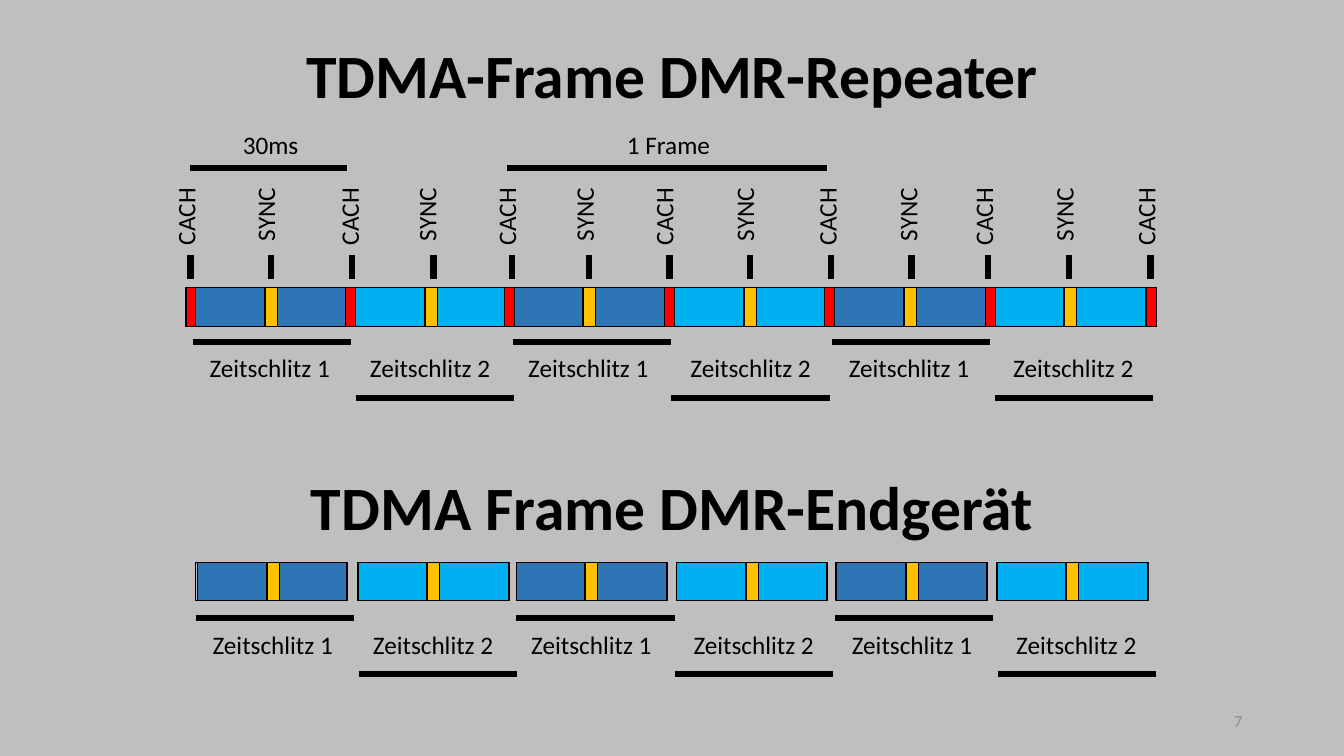
from pptx import Presentation
from pptx.dml.color import RGBColor
from pptx.enum.shapes import MSO_CONNECTOR, MSO_SHAPE
from pptx.enum.text import MSO_ANCHOR, MSO_AUTO_SIZE, PP_ALIGN
from pptx.oxml.ns import qn
from pptx.util import Inches, Pt
from lxml import etree

RECT = MSO_SHAPE.RECTANGLE
LINE = MSO_CONNECTOR.STRAIGHT
LEFT, CENTER, RIGHT = PP_ALIGN.LEFT, PP_ALIGN.CENTER, PP_ALIGN.RIGHT
TOP, MIDDLE = MSO_ANCHOR.TOP, MSO_ANCHOR.MIDDLE
GROW, FIXED = MSO_AUTO_SIZE.SHAPE_TO_FIT_TEXT, MSO_AUTO_SIZE.NONE

BLACK = RGBColor(0x00, 0x00, 0x00)
GRAY = RGBColor(0xBF, 0xBF, 0xBF)
DIM = RGBColor(0x8C, 0x8C, 0x8C)
BLUE = RGBColor(0x2E, 0x75, 0xB6)
CYAN = RGBColor(0x00, 0xB0, 0xF0)
RED = RGBColor(0xFF, 0x00, 0x00)
GOLD = RGBColor(0xFF, 0xC0, 0x00)

SLOTS = [1.94, 3.53, 5.1, 6.69, 8.28, 9.87]
BARS = [1.91, 3.53, 5.09, 6.66, 8.25, 9.87]
LABELS = [1.98, 3.57, 5.14, 6.75, 8.32, 9.95]
FRAMES = [1.94, 3.55, 5.12, 6.71, 8.29, 9.89]
CACH = [(1.89, 1.64), (3.49, 3.26), (5.08, 4.82), (6.64, 6.38),
        (8.24, 8), (9.8, 9.55), (11.41, 11.16)]
SYNC = [(2.69, 2.43), (4.3, 4.03), (5.84, 5.59), (7.44, 7.18),
        (9.04, 8.8), (10.6, 10.35)]


class Canvas:
    font = "Calibri"

    def __init__(self, slide):
        self.slide = slide
        self.shapes = slide.shapes
        slide.background.fill.solid()
        slide.background.fill.fore_color.rgb = GRAY

    def group(self):
        self.shapes = self.slide.shapes.add_group_shape().shapes

    def style(self, shape, text, size, color=BLACK, bold=False,
              align=LEFT, anchor=TOP):
        frame = shape.text_frame
        frame.text = text
        frame.vertical_anchor = anchor
        frame.word_wrap = True
        frame.auto_size = FIXED
        par = frame.paragraphs[0]
        par.alignment = align
        par.font.name = self.font
        par.font.size = Pt(size)
        par.font.bold = bold
        par.font.color.rgb = color
        return par

    def title(self, text, x, y, w, h):
        shape = self.slide.shapes.title
        shape.left, shape.top = Inches(x), Inches(y)
        shape.width, shape.height = Inches(w), Inches(h)
        par = self.style(shape, text, 44, bold=True, align=CENTER, anchor=MIDDLE)
        par.line_spacing = 0.9

    def text(self, text, x, y, w, h, size, **look):
        box = self.shapes.add_textbox(Inches(x), Inches(y), Inches(w), Inches(h))
        self.style(box, text, size, **look)
        return box

    def label(self, text, x, y, w, h=0.4, turned=False):
        box = self.text(text, x, y, w, h, 18)
        box.text_frame.word_wrap = False
        box.text_frame.auto_size = GROW
        if turned:
            body = box.element.find(".//" + qn("a:bodyPr"))
            body.set("vert", "vert270")

    def rect(self, x, y, w, h, color=None):
        shape = self.shapes.add_shape(RECT, Inches(x), Inches(y), Inches(w), Inches(h))
        shape.shadow.inherit = False
        shape.line.color.rgb = BLACK
        if color is None:
            shape.fill.background()
            shape.line.width = Pt(1)
        else:
            shape.fill.solid()
            shape.fill.fore_color.rgb = color
            shape.line.width = Pt(0.75)

    def line(self, x1, y1, x2, y2):
        rule = self.shapes.add_connector(LINE, Inches(x1), Inches(y1),
                                         Inches(x2), Inches(y2))
        rule.line.color.rgb = BLACK
        rule.line.width = Pt(4.5)
        etree.SubElement(rule.element.spPr, qn("a:effectLst"))

    def slot(self, x, y, h, color):
        self.rect(x, y, 0.68, h, color)
        self.rect(x + 0.69, y, 0.12, h, GOLD)
        self.rect(x + 0.81, y, 0.68, h, color)

    def slots(self, dx, y, h):
        for i, x in enumerate(SLOTS):
            self.slot(x + dx, y, h, CYAN if i % 2 else BLUE)

    def legend(self, dx, y):
        for i, (bar, left) in enumerate(zip(BARS, LABELS)):
            odd = i % 2
            level = y + 0.56 * odd
            self.line(bar + dx, level, bar + dx + 1.57, level)
            self.label(f"Zeitschlitz {odd + 1}", left + dx, y + 0.06, 1.41)

    def marks(self, text, spots, h):
        for x, left in spots:
            self.line(x, 2.77, x, 2.53)
            self.label(text, left, 1.86, 0.5, h, turned=True)


def main():
    deck = Presentation()
    deck.slide_width, deck.slide_height = Inches(13.33), Inches(7.5)
    page = Canvas(deck.slides.add_slide(deck.slide_layouts[5]))
    page.title("TDMA-Frame DMR-Repeater", 0.92, 0.05, 11.5, 1.45)
    page.text("7", 9.42, 6.95, 3, 0.4, 12, color=DIM, align=RIGHT, anchor=MIDDLE)
    page.text("TDMA Frame DMR-Endgerät", 2.17, 4.39, 9, 1.25, 44,
              bold=True, align=CENTER, anchor=MIDDLE)

    page.group()
    page.slots(0, 2.85, 0.39)
    for x in SLOTS + [11.47]:
        page.rect(x - 0.1, 2.85, 0.1, 0.39, RED)
    page.legend(0, 3.39)
    page.marks("CACH", CACH, 0.67)
    page.marks("SYNC", SYNC, 0.63)
    page.line(1.88, 1.67, 3.44, 1.67)
    page.line(5.03, 1.67, 8.2, 1.67)
    page.label("30ms", 2.31, 1.23, 0.76)
    page.label("1 Frame", 6.12, 1.23, 1.03)
    page.rect(1.85, 2.85, 9.62, 0.39)

    page.group()
    page.slots(0.02, 5.58, 0.38)
    page.legend(0.03, 6.13)
    for x in FRAMES:
        page.rect(x, 5.58, 1.5, 0.38)

    deck.save("out.pptx")


if __name__ == "__main__":
    main()
